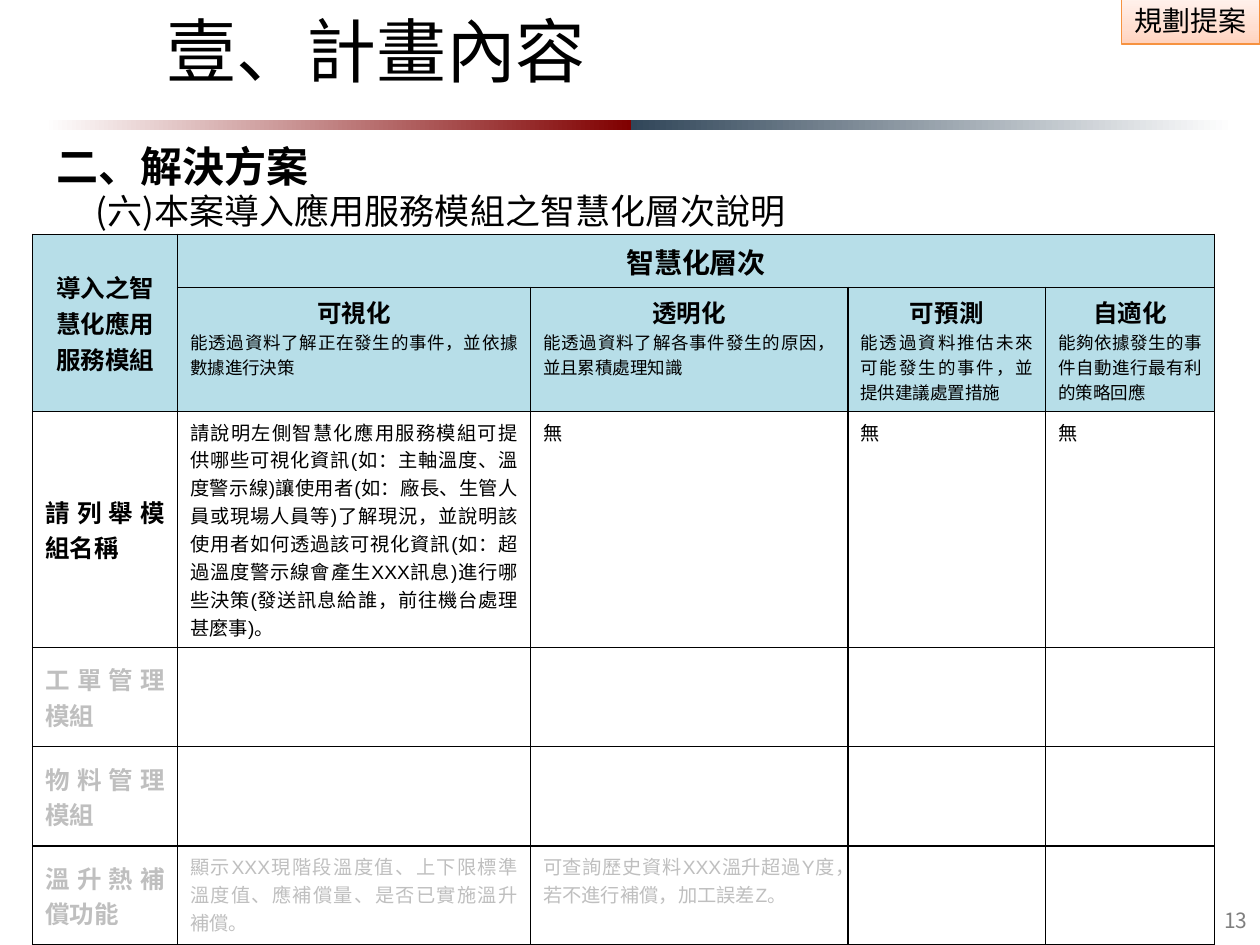
from lxml.etree import SubElement
from pptx import Presentation
from pptx.dml.color import RGBColor
from pptx.enum.shapes import MSO_SHAPE
from pptx.enum.text import MSO_ANCHOR, MSO_AUTO_SIZE, PP_ALIGN
from pptx.oxml.ns import qn
from pptx.util import Inches, Pt

theme = {
    "cjk": "Noto Sans CJK SC", "latin": "Arial",
    "ink": "000000", "faint": "BFBFBF", "page": "7F7F7F",
    "head": "B7DEE8", "edge": "F69240",
    "title": 40, "part": 24, "topic": 20, "tag": 16,
    "top": 16, "name": 14, "note": 10, "body": 11, "num": 12,
}

deck = Presentation()
deck.slide_width, deck.slide_height = Inches(10), Inches(7.5)
col, row = deck.slide_width / 100, deck.slide_height / 100
slide = deck.slides.add_slide(deck.slide_layouts[1])
shapes = slide.shapes


def place(x, y, w, h):
    return int(x * col), int(y * row), int(w * col), int(h * row)


def write(para, text, size, align=PP_ALIGN.LEFT, color="ink", bold=False, face="cjk"):
    para.alignment = align
    run = para.add_run()
    run.text = text
    font = run.font
    font.size, font.bold, font.name = Pt(theme[size]), bold, theme[face]
    font.color.rgb = RGBColor.from_string(theme[color])
    SubElement(run.font._element, qn("a:ea")).set("typeface", theme["cjk"])


bands = [
    (89, -0.27, 11, 4.93, 90, [(0, "FFD2BD"), (35, "FFDED0"), (100, "FFF2ED")]),
    (3.5, 12.67, 46.6, 1.07, 0, [(0, "FFFFFF"), (100, "800000")]),
    (50.1, 12.67, 47.8, 1.07, 0, [(0, "314659"), (100, "FFFFFF")]),
]
bars = []
for x, y, w, h, angle, stops in bands:
    bar = shapes.add_shape(MSO_SHAPE.RECTANGLE, *place(x, y, w, h))
    bar.shadow.inherit = False
    bar.line.fill.background()
    bar.fill.gradient()
    bar.fill.gradient_angle = angle
    ramp = bar.element.spPr.find(qn("a:gradFill")).find(qn("a:gsLst"))
    for old in list(ramp):
        ramp.remove(old)
    for pos, tint in stops:
        stop = SubElement(ramp, qn("a:gs"))
        stop.set("pos", str(pos * 1000))
        SubElement(stop, qn("a:srgbClr")).set("val", tint)
    bars.append(bar)

tag = bars[0]
tag.line.color.rgb = RGBColor.from_string(theme["edge"])
tag.line.width = Pt(0.75)
tag.text_frame.word_wrap = False
write(tag.text_frame.paragraphs[0], "規劃提案", "tag", PP_ALIGN.CENTER)

title = shapes.title
title.left, title.top, title.width, title.height = place(12.2, 0.67, 66.9, 9.07)
title.text_frame.vertical_anchor = MSO_ANCHOR.MIDDLE
title.text_frame.auto_size = MSO_AUTO_SIZE.NONE
write(title.text_frame.paragraphs[0], "壹、計畫內容", "title")

body = slide.placeholders[1]
body.left, body.top, body.width, body.height = place(2.6, 13.6, 66.9, 11.2)
frame = body.text_frame
frame.auto_size = MSO_AUTO_SIZE.NONE
heads = [
    ("二、解決方案", "part", True, 0.9, 32),
    ("(六)本案導入應用服務模組之智慧化層次說明", "topic", False, 4, 23),
]
for i, (text, size, bold, inset, pitch) in enumerate(heads):
    para = frame.add_paragraph() if i else frame.paragraphs[0]
    props = para._p.get_or_add_pPr()
    props.set("marL", str(int(inset * col)))
    props.set("indent", "0")
    SubElement(props, qn("a:buNone"))
    para.space_before = Pt(0)
    para.line_spacing = Pt(pitch)
    write(para, text, size, bold=bold)

wide = [11.5, 28, 25.2, 15.7, 13.4]
high = [5.6, 13.1, 24.9, 10.5, 10.5, 10.5]
grid = shapes.add_table(len(high), len(wide), *place(2.6, 24.8, sum(wide), sum(high))).table
for part, size in zip(grid.columns, wide):
    part.width = int(size * col)
for part, size in zip(grid.rows, high):
    part.height = int(size * row)
for r in range(len(high)):
    for c in range(len(wide)):
        cell = grid.cell(r, c)
        if r < 2:
            cell.fill.solid()
            cell.fill.fore_color.rgb = RGBColor.from_string(theme["head"])
        else:
            cell.fill.background()
        props = cell._tc.get_or_add_tcPr()
        for i, side in enumerate(("lnL", "lnR", "lnT", "lnB")):
            line = SubElement(props, qn("a:" + side))
            line.set("w", str(Pt(1)))
            ink = SubElement(SubElement(line, qn("a:solidFill")), qn("a:srgbClr"))
            ink.set("val", theme["ink"])
            props.insert(i, line)
grid.cell(0, 0).merge(grid.cell(1, 0))
grid.cell(0, 1).merge(grid.cell(0, 4))

for c, text, size in [(0, "導入之智慧化應用服務模組", "name"), (1, "智慧化層次", "top")]:
    cell = grid.cell(0, c)
    cell.vertical_anchor = MSO_ANCHOR.MIDDLE
    write(cell.text_frame.paragraphs[0], text, size, PP_ALIGN.CENTER, bold=True, face="latin")

levels = [
    ("可視化", "能透過資料了解正在發生的事件，並依據數據進行決策"),
    ("透明化", "能透過資料了解各事件發生的原因，並且累積處理知識"),
    ("可預測", "能透過資料推估未來可能發生的事件，並提供建議處置措施"),
    ("自適化", "能夠依據發生的事件自動進行最有利的策略回應"),
]
for c, (name, note) in enumerate(levels, 1):
    frame = grid.cell(1, c).text_frame
    write(frame.paragraphs[0], name, "name", PP_ALIGN.CENTER, bold=True, face="latin")
    write(frame.add_paragraph(), note, "note", PP_ALIGN.JUSTIFY)

items = [
    ("ink", ["請列舉模組名稱",
             "請說明左側智慧化應用服務模組可提供哪些可視化資訊(如：主軸溫度、溫度警示線)"
             "讓使用者(如：廠長、生管人員或現場人員等)了解現況，並說明該使用者如何透過該"
             "可視化資訊(如：超過溫度警示線會產生XXX訊息)進行哪些決策(發送訊息給誰，"
             "前往機台處理甚麼事)。",
             "無", "無", "無"]),
    ("faint", ["工單管理模組"]),
    ("faint", ["物料管理模組"]),
    ("faint", ["溫升熱補償功能",
               "顯示XXX現階段溫度值、上下限標準溫度值、應補償量、是否已實施溫升補償。",
               "可查詢歷史資料XXX溫升超過Y度，若不進行補償，加工誤差Z。"]),
]
for r, (color, texts) in enumerate(items, 2):
    grid.cell(r, 0).vertical_anchor = MSO_ANCHOR.MIDDLE
    for c, text in enumerate(texts):
        write(grid.cell(r, c).text_frame.paragraphs[0], text, "body" if c else "name",
              PP_ALIGN.JUSTIFY, color, bold=c == 0, face="latin")

page = shapes.add_textbox(*place(92.5, 95.47, 7.5, 4.27)).text_frame
page.word_wrap = True
page.vertical_anchor = MSO_ANCHOR.MIDDLE
page.paragraphs[0].line_spacing = Pt(12)
write(page.paragraphs[0], "13", "num", PP_ALIGN.RIGHT, "page")

deck.save("out.pptx")
